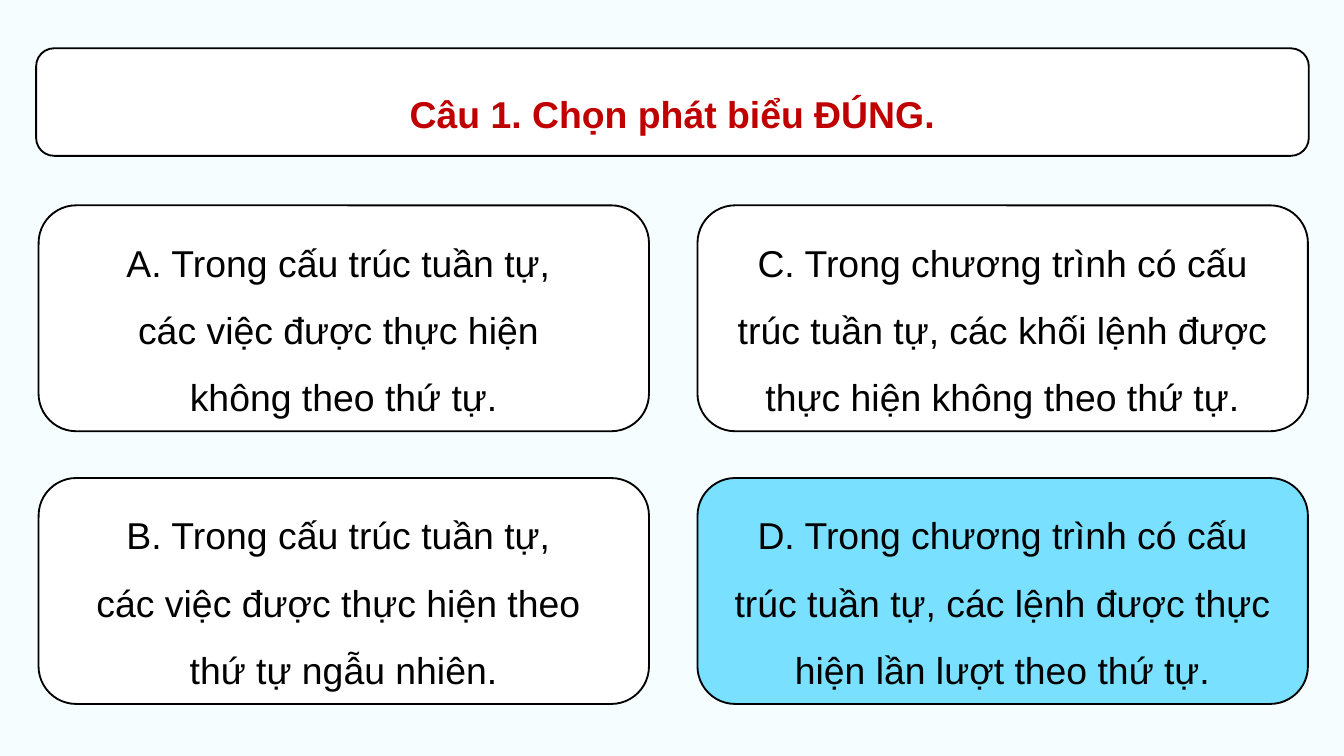
from dataclasses import dataclass

from pptx import Presentation
from pptx.dml.color import RGBColor
from pptx.enum import shapes, text
from pptx.util import Pt


@dataclass(frozen=True)
class Theme:
    background: str = "F6FDFF"
    card: str = "FFFFFF"
    correct: str = "79E1FF"
    outline: str = "000000"
    question: str = "C00000"
    answer: str = "000000"
    font: str = "Arial"
    size: float = 20
    line_spacing: float = 1.5


THEME = Theme()
QUESTION = "Câu 1. Chọn phát biểu ĐÚNG."
QUESTION_BOX = (19.4, 25.9, 681.8, 57.6)
GRID_LEFT, GRID_TOP = 20.7, 110
CARD_WIDTH, CARD_HEIGHT = 327, 121
COLUMN_STEP, ROW_STEP = 353, 146.1
CORRECT = "D"

# Answers run down the first column, then down the second.
ANSWERS = [
    ["A. Trong cấu trúc tuần tự, ", "các việc được thực hiện ", "không theo thứ tự."],
    ["B. Trong cấu trúc tuần tự, ", "các việc được thực hiện theo ", "thứ tự ngẫu nhiên."],
    ["C. Trong chương trình có cấu trúc tuần tự, các khối lệnh được thực hiện không theo thứ tự."],
    ["D. Trong chương trình có cấu trúc tuần tự, các lệnh được thực hiện lần lượt theo thứ tự."],
]


def rgb(value):
    return RGBColor.from_string(value)


def set_attributes(target, values):
    for name, value in values.items():
        setattr(target, name, value)


def add_card(s, box, fill):
    sp = s.shapes.add_shape(shapes.MSO_SHAPE.ROUNDED_RECTANGLE, *map(Pt, box))
    sp.shadow.inherit = False
    sp.fill.solid()
    sp.fill.fore_color.rgb = rgb(fill)
    sp.line.color.rgb = rgb(THEME.outline)
    sp.line.width = Pt(1)
    return sp


def write_lines(sp, lines, color, bold=False):
    tf = sp.text_frame
    set_attributes(tf, {
        "word_wrap": True,
        "auto_size": text.MSO_AUTO_SIZE.NONE,
        "vertical_anchor": text.MSO_ANCHOR.MIDDLE,
    })
    for i, line in enumerate(lines):
        p = tf.add_paragraph() if i else tf.paragraphs[0]
        set_attributes(p, {
            "alignment": text.PP_ALIGN.CENTER,
            "line_spacing": THEME.line_spacing,
        })
        r = p.add_run()
        r.text = line
        set_attributes(r.font, {"name": THEME.font, "size": Pt(THEME.size), "bold": bold})
        r.font.color.rgb = rgb(color)


def add_question(s):
    """Lay the title placeholder over its rounded card."""
    add_card(s, QUESTION_BOX, THEME.card)
    title = s.shapes.title
    set_attributes(title, dict(zip(("left", "top", "width", "height"), map(Pt, QUESTION_BOX))))
    write_lines(title, [QUESTION], THEME.question, bold=True)
    s.shapes._spTree.append(title._element)  # bring in front of the card


def add_answers(s):
    for i, lines in enumerate(ANSWERS):
        column, row = divmod(i, 2)
        box = (GRID_LEFT + column * COLUMN_STEP, GRID_TOP + row * ROW_STEP,
               CARD_WIDTH, CARD_HEIGHT)
        fill = THEME.correct if lines[0].startswith(CORRECT) else THEME.card
        write_lines(add_card(s, box, fill), lines, THEME.answer)


def main():
    prs = Presentation()
    prs.slide_width, prs.slide_height = Pt(720), Pt(405)
    s = prs.slides.add_slide(prs.slide_layouts[5])
    s.background.fill.solid()
    s.background.fill.fore_color.rgb = rgb(THEME.background)
    add_question(s)
    add_answers(s)
    prs.save("out.pptx")


if __name__ == "__main__":
    main()
